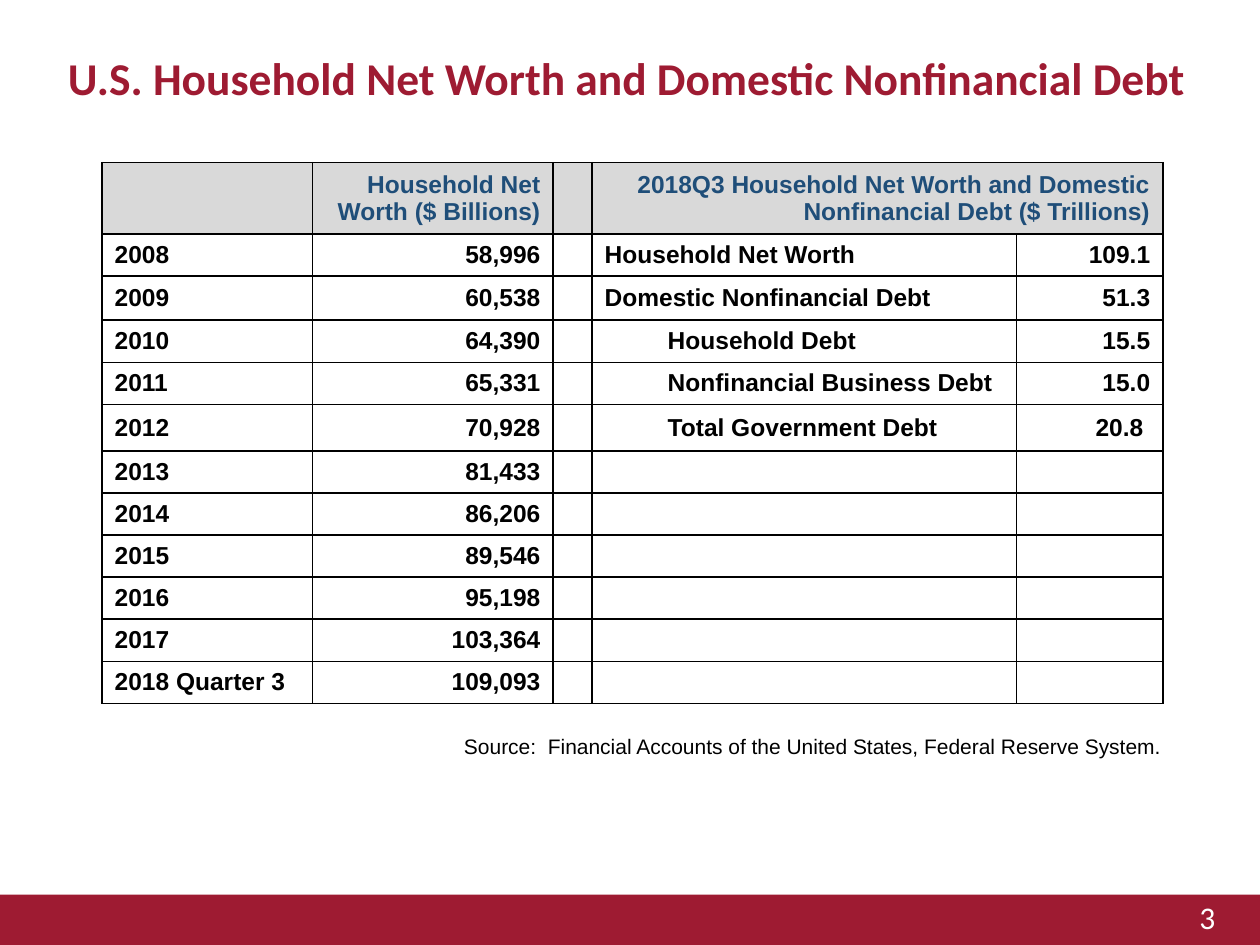
import pptx
import pptx.dml.color
import pptx.enum.shapes
import pptx.enum.text
import pptx.oxml
import pptx.oxml.ns
import pptx.util
from lxml import etree

Inches = pptx.util.Inches
Pt = pptx.util.Pt
ALIGN = pptx.enum.text.PP_ALIGN
ANCHOR = pptx.enum.text.MSO_ANCHOR

CRIMSON, BLUE, GRAY, BLACK, WHITE = "9E1B32", "1F4E79", "D9D9D9", "000000", "FFFFFF"

TITLE = "U.S. Household Net Worth and Domestic Nonfinancial Debt"
SOURCE = "Source:  Financial Accounts of the United States, Federal Reserve System."
HEADERS = [
    "",
    "Household Net Worth ($ Billions)",
    "",
    "2018Q3 Household Net Worth and Domestic Nonfinancial Debt ($ Trillions)",
    "",
]
NET_WORTH = [
    ("2008", "58,996"),
    ("2009", "60,538"),
    ("2010", "64,390"),
    ("2011", "65,331"),
    ("2012", "70,928"),
    ("2013", "81,433"),
    ("2014", "86,206"),
    ("2015", "89,546"),
    ("2016", "95,198"),
    ("2017", "103,364"),
    ("2018 Quarter 3", "109,093"),
]
# Label, value, indent in inches
DEBT = [
    ("Household Net Worth", "109.1", 0),
    ("Domestic Nonfinancial Debt", "51.3", 0),
    ("Household Debt", "15.5", 0.5),
    ("Nonfinancial Business Debt", "15.0", 0.5),
    ("Total Government Debt", "20.8 ", 0.5),
]
COLUMN_WIDTHS = [1.67, 1.91, 0.31, 3.37, 1.16]
ROW_HEIGHTS = [0.54, 0.32, 0.35, 0.32, 0.32, 0.37, 0.33, 0.32, 0.32, 0.32, 0.32, 0.33]
NUMBER_COLUMNS = (1, 4)
LABEL_COLUMN = 3


def rgb(color):
    return pptx.dml.color.RGBColor.from_string(color)


def write(paragraph, text, size, font, color, bold=False, align=ALIGN.LEFT):
    paragraph.alignment = align
    run = paragraph.add_run()
    run.text = text
    run.font.size = Pt(size)
    run.font.name = font
    run.font.bold = bold
    run.font.color.rgb = rgb(color)


def add_text(slide, box, text, size, font, color, wrap=True, **style):
    shape = slide.shapes.add_textbox(*map(Inches, box))
    shape.text_frame.word_wrap = wrap
    paragraph = shape.text_frame.paragraphs[0]
    write(paragraph, text, size, font, color, **style)
    return paragraph


def add_borders(cell):
    properties = cell._tc.get_or_add_tcPr()
    for side in ("lnL", "lnR", "lnT", "lnB"):
        line = etree.SubElement(properties, pptx.oxml.ns.qn(f"a:{side}"), w=str(Pt(1)))
        fill = etree.SubElement(line, pptx.oxml.ns.qn("a:solidFill"))
        etree.SubElement(fill, pptx.oxml.ns.qn("a:srgbClr"), val=BLACK)


def set_empty_size(paragraph, size):
    """Keep an empty cell from making its row taller."""
    etree.SubElement(paragraph._p, pptx.oxml.ns.qn("a:endParaRPr"), sz=str(size * 100))


def fill_cell(cell, text, header, align, indent):
    add_borders(cell)
    cell.vertical_anchor = ANCHOR.MIDDLE
    if header:
        cell.fill.solid()
        cell.fill.fore_color.rgb = rgb(GRAY)
    else:
        cell.fill.background()
    paragraph = cell.text_frame.paragraphs[0]
    if text:
        write(paragraph, text, 14, "Arial", BLUE if header else BLACK, True, align)
    else:
        set_empty_size(paragraph, 14)
    if indent:
        paragraph.level = 1
        properties = paragraph._p.get_or_add_pPr()
        properties.set("marL", str(Inches(indent)))
        properties.set("indent", "0")


def add_net_worth_table(slide):
    blanks = [("", "", 0)] * (len(NET_WORTH) - len(DEBT))
    rows = [(HEADERS, 0)]
    for (year, worth), (label, value, indent) in zip(NET_WORTH, DEBT + blanks):
        rows.append(([year, worth, "", label, value], indent))

    frame = slide.shapes.add_table(
        len(rows), len(COLUMN_WIDTHS), Inches(0.81), Inches(1.29),
        Inches(sum(COLUMN_WIDTHS)), Inches(sum(ROW_HEIGHTS)))
    table = frame.table
    table.first_row = table.horz_banding = False
    for column, width in zip(table.columns, COLUMN_WIDTHS):
        column.width = Inches(width)
    for row, height in zip(table.rows, ROW_HEIGHTS):
        row.height = Inches(height)
    table.cell(0, 3).merge(table.cell(0, 4))

    for row, (texts, indent) in enumerate(rows):
        for column, text in enumerate(texts):
            header = row == 0
            align = ALIGN.RIGHT if header or column in NUMBER_COLUMNS else ALIGN.LEFT
            fill_cell(table.cell(row, column), text, header, align,
                      indent if column == LABEL_COLUMN else 0)


def main():
    presentation = pptx.Presentation()
    presentation.slide_width, presentation.slide_height = Inches(10), Inches(7.5)
    slide = presentation.slides.add_slide(presentation.slide_layouts[6])

    footer = slide.shapes.add_shape(
        pptx.enum.shapes.MSO_SHAPE.RECTANGLE, 0, Inches(7.1), Inches(10.01), Inches(0.4))
    footer.shadow.inherit = False
    footer.fill.solid()
    footer.fill.fore_color.rgb = rgb(CRIMSON)
    footer.line.fill.background()

    add_text(slide, (9.42, 7.08, 0.58, 0.4), "3", 18, "Calibri", WHITE)
    title = add_text(slide, (0.44, 0.4, 9.1, 0.69), TITLE, 26, "Calibri", CRIMSON,
                     wrap=False, bold=True)
    title.line_spacing = 0.9
    add_net_worth_table(slide)
    add_text(slide, (3.57, 5.77, 5.75, 0.3), SOURCE, 12, "Arial", BLACK, align=ALIGN.RIGHT)

    presentation.save("out.pptx")


if __name__ == "__main__":
    main()
